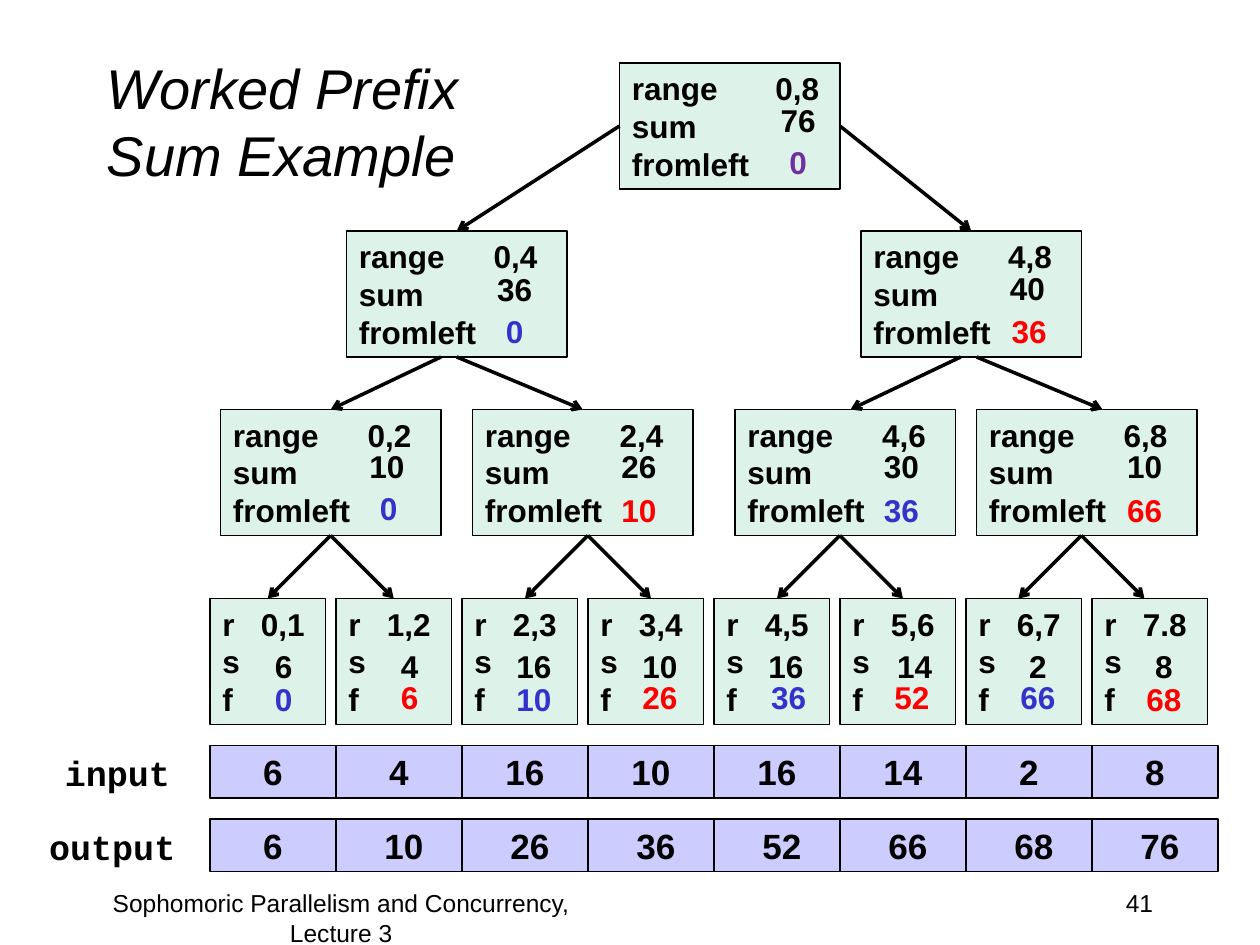
from pptx import Presentation
from pptx.dml.color import RGBColor
from pptx.enum.shapes import MSO_CONNECTOR, MSO_SHAPE
from pptx.enum.text import MSO_ANCHOR, PP_ALIGN
from pptx.oxml.ns import qn
from pptx.util import Pt
from lxml import etree

RECT = MSO_SHAPE.RECTANGLE
STRAIGHT = MSO_CONNECTOR.STRAIGHT
TOP, MID = MSO_ANCHOR.TOP, MSO_ANCHOR.MIDDLE
LEFT, CENTER, RIGHT = PP_ALIGN.LEFT, PP_ALIGN.CENTER, PP_ALIGN.RIGHT
HEX = {"black": "000000", "node": "DDF3EA", "cell": "CCCCFF",
       "violet": "7030A0", "blue": "3333CC", "red": "FF0000"}
RGB = {name: RGBColor.from_string(code) for name, code in HEX.items()}

deck = Presentation()
deck.slide_width, deck.slide_height = Pt(720), Pt(540)
slide = deck.slides.add_slide(deck.slide_layouts[6])
shapes = slide.shapes


def write(text, x, y, w, h, size=18, font="Arial", color="black", bold=True,
          italic=False, align=LEFT, anchor=TOP, wrap=False, fill=None,
          tab=None, inset=7.2):
    """Add a text box, or a framed rectangle if a fill is given."""
    area = Pt(x), Pt(y), Pt(w), Pt(h)
    if fill:
        box = shapes.add_shape(RECT, *area)
        box.shadow.inherit = False
        box.fill.solid()
        box.fill.fore_color.rgb = RGB[fill]
        box.line.color.rgb = RGB["black"]
        box.line.width = Pt(0.75)
    else:
        box = shapes.add_textbox(*area)
    frame = box.text_frame
    frame.word_wrap = wrap
    frame.vertical_anchor = anchor
    frame.margin_left = Pt(inset)
    frame.text = text
    for para in frame.paragraphs:
        para.alignment = align
        if tab:
            stops = etree.SubElement(para._p.get_or_add_pPr(), qn("a:tabLst"))
            etree.SubElement(stops, qn("a:tab"), pos=str(Pt(tab)), algn="l")
        for run in para.runs:
            run.font.name, run.font.size = font, Pt(size)
            run.font.bold, run.font.italic = bold, italic
            run.font.color.rgb = RGB[color]
    return box


def link(start, end, x1, y1, x2, y2, side):
    """Draw an arrow between nodes, joined wherever it meets a side's middle."""
    line = shapes.add_connector(STRAIGHT, Pt(x1), Pt(y1), Pt(x2), Pt(y2))
    if side != 2 or Pt(x1) == start.left + start.width // 2:
        line.begin_connect(start, side)
    if Pt(x2) == end.left + end.width // 2:
        line.end_connect(end, 0)
    line.line.color.rgb = RGB["black"]
    line.line.width = Pt(2)
    props = line._element.spPr
    etree.SubElement(props.find(qn("a:ln")), qn("a:tailEnd"), type="arrow")
    etree.SubElement(props, qn("a:effectLst"))


# Title and footer
write("Worked Prefix\vSum Example", 54, 24, 612, 90, size=32, bold=False,
      italic=True, anchor=MID, wrap=True)
write("41", 516, 504, 150, 36, size=14, bold=False, align=RIGHT, wrap=True)
write("Sophomoric Parallelism and Concurrency, Lecture 3", 36, 504, 318, 36,
      size=14, bold=False, align=CENTER, wrap=True)

# Input and output arrays
ROWS = [("input", 30, 75, 426, [6, 4, 16, 10, 16, 14, 2, 8]),
        ("output", 21, 87, 468, [6, 10, 26, 36, 52, 66, 68, 76])]
for name, x, w, y, values in ROWS:
    write(name, x, y, w, 32, size=20, font="Courier New")
    for i, value in enumerate(values):
        shift = 5.6 if name == "output" and i else 0
        write(str(value), 120 + 72 * i, y, 72, 30, size=20, align=CENTER,
              anchor=MID, wrap=True, fill="cell", inset=7.2 + shift)

# Tree levels: top, node width, labels, tab stop, then nodes with
# left, range, (sum, x, y), (fromleft, x, y, color)
WIDE, SHORT = ("range", "sum", "fromleft"), ("r", "s", "f")
LEVELS = [
    (36, 126, WIDE, 82, [
        (354, "0,8", (76, 439, 54), (0, 444, 78, "violet"))]),
    (132, 126, WIDE, 77, [
        (198, "0,4", (36, 277, 151), (0, 282, 175, "blue")),
        (492, "4,8", (40, 570, 150), (36, 571, 175, "red"))]),
    (234, 126, WIDE, 77, [
        (126, "0,2", (10, 204, 252), (0, 210, 276, "blue")),
        (270, "2,4", (26, 348, 252), (10, 348, 277, "red")),
        (420, "4,6", (30, 498, 252), (36, 498, 277, "blue")),
        (558, "6,8", (10, 637, 252), (66, 637, 277, "red"))]),
    (342, 66, SHORT, 22, [
        (120, "0,1", (6, 150, 366), (0, 150, 385, "blue")),
        (192, "1,2", (4, 222, 366), (6, 222, 384, "red")),
        (264, "2,3", (16, 288, 366), (10, 288, 385, "blue")),
        (336, "3,4", (10, 360, 366), (26, 360, 384, "red")),
        (408, "4,5", (16, 432, 366), (36, 433.5, 384, "blue")),
        (480, "5,6", (14, 505.5, 366), (52, 504, 384, "red")),
        (552, "6,7", (2, 581, 366), (66, 576, 384, "blue")),
        (624, "7.8", (8, 653, 366), (68, 648, 385, "red"))]),
]
tree = []
for top, width, labels, tab, nodes in LEVELS:
    row = []
    for x, span, total, left in nodes:
        text = f"{labels[0]}\t{span}\n{labels[1]}\n{labels[2]}"
        row.append(write(text, x, top, width, 72, fill="node", tab=tab))
        for value, vx, vy, color in (total + ("black",), left):
            write(str(value), vx, vy, 24.5 if value < 10 else 34.5, 29,
                  color=color)
    tree.append(row)

# Arrows from each parent to its two children: start x, end x
ARROWS = [
    (72, 132, [(354, 261), (480, 555)]),
    (204, 234, [(252, 189), (261, 333), (549, 486), (558, 630)]),
    (306, 342, [(x, x + dx) for x in (189, 336, 480, 618)
                for dx in (-36, 36)]),
]
for depth, (y1, y2, pairs) in enumerate(ARROWS):
    for i, (x1, x2) in enumerate(pairs):
        side = 2 if depth else (1, 3)[i]
        link(tree[depth][i // 2], tree[depth + 1][i], x1, y1, x2, y2, side)

deck.save("out.pptx")
